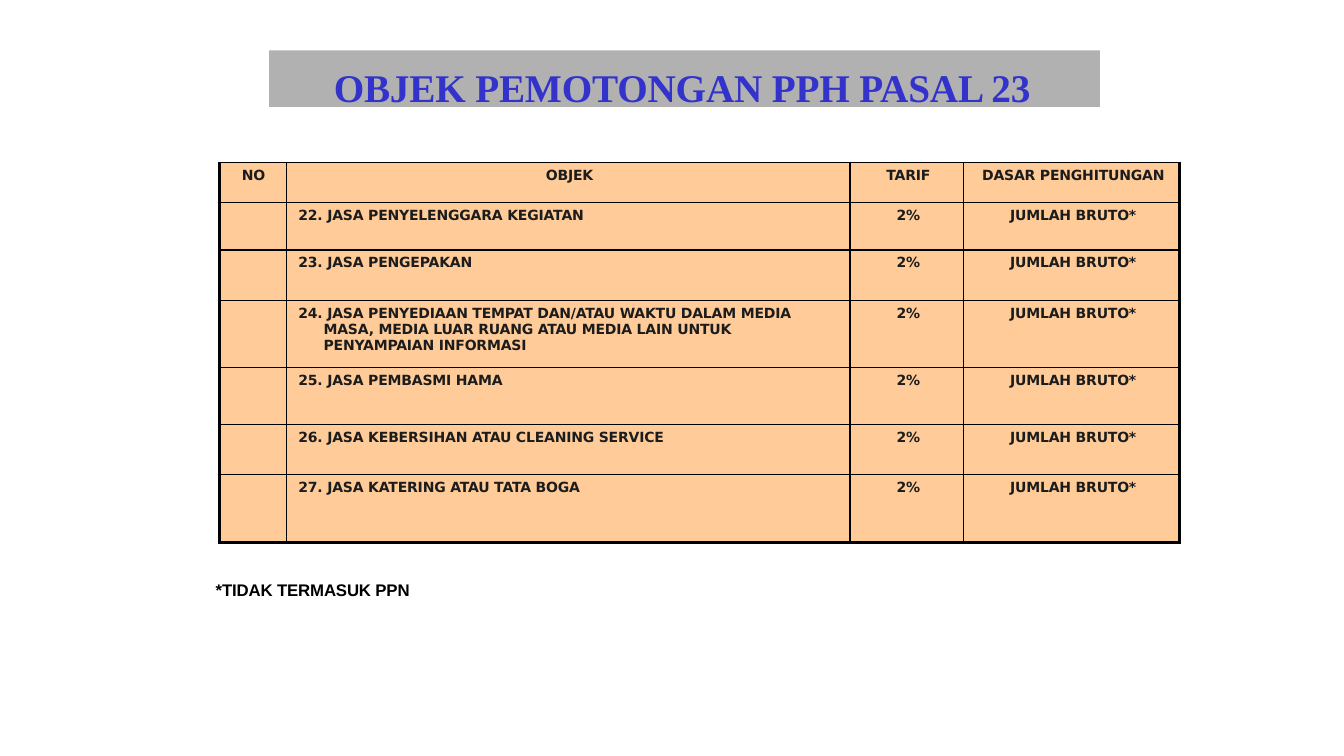
import pptx
import pptx.util
import pptx.dml.color
import pptx.enum.text
import pptx.oxml.ns
import lxml.etree

Inches = pptx.util.Inches
Pt = pptx.util.Pt
RGB = pptx.dml.color.RGBColor
ALIGN = pptx.enum.text.PP_ALIGN
ANCHOR = pptx.enum.text.MSO_ANCHOR
FIT = pptx.enum.text.MSO_AUTO_SIZE

PEACH = RGB(0xFF, 0xCC, 0x99)
GREY = RGB(0xB1, 0xB1, 0xB1)
BLUE = RGB(0x33, 0x33, 0xCC)
INK = RGB(0x1C, 0x1C, 0x1C)
BLACK = RGB(0, 0, 0)

TITLE = "OBJEK PEMOTONGAN PPH PASAL 23"
NOTE = "*TIDAK TERMASUK PPN"
HEAD = ["NO", "OBJEK", "TARIF", "DASAR PENGHITUNGAN"]
ITEMS = [
    "22. JASA PENYELENGGARA KEGIATAN",
    "23. JASA PENGEPAKAN",
    "24. JASA PENYEDIAAN TEMPAT DAN/ATAU WAKTU DALAM MEDIA MASA, "
    "MEDIA LUAR RUANG ATAU MEDIA LAIN UNTUK PENYAMPAIAN INFORMASI",
    "25. JASA PEMBASMI HAMA",
    "26. JASA KEBERSIHAN ATAU CLEANING SERVICE",
    "27. JASA KATERING ATAU TATA BOGA",
]
RATE, BASE = "2%", "JUMLAH BRUTO*"
COLS = [0.66, 5.59, 1.13, 2.14]
ROWS = [0.4, 0.47, 0.5, 0.67, 0.56, 0.5, 0.67]
THIN, THICK = 1, 2.25
HANG = 0.25


def inset(box, left, top, right=0):
    box.margin_left, box.margin_top = Inches(left), Inches(top)
    box.margin_right, box.margin_bottom = Inches(right), 0


def write(frame, text, face, size, color, align=ALIGN.LEFT):
    """Fill a text frame with one bold, slightly tightened paragraph."""
    para = frame.paragraphs[0]
    para.text = text
    para.alignment = align
    para.space_before = Pt(0)
    font = para.font
    font.name, font.size, font.bold = face, Pt(size), True
    font.color.rgb = color
    for run in para.runs:
        run.font.bold = True
        run.font._element.set("spc", "-10")
    return para


def border(cell, widths):
    """Draw the left, right, top and bottom edges, widths in points."""
    props = cell._tc.get_or_add_tcPr()
    for i, (side, width) in enumerate(zip("LRTB", widths)):
        line = lxml.etree.Element(pptx.oxml.ns.qn(f"a:ln{side}"), w=str(Pt(width)))
        fill = lxml.etree.SubElement(line, pptx.oxml.ns.qn("a:solidFill"))
        lxml.etree.SubElement(fill, pptx.oxml.ns.qn("a:srgbClr"), val=str(BLACK))
        props.insert(i, line)


def add_title(slide):
    title = slide.shapes.title
    title.left, title.top = Inches(2.67), Inches(0.5)
    title.width, title.height = Inches(8.24), Inches(0.56)
    title.fill.solid()
    title.fill.fore_color.rgb = GREY
    frame = title.text_frame
    frame.auto_size = FIT.NONE
    frame.vertical_anchor = ANCHOR.TOP
    inset(frame, 0.64, 0.13)
    write(frame, TITLE, "Times New Roman", 28, BLUE)


def add_grid(slide):
    data = [HEAD] + [["", item, RATE, BASE] for item in ITEMS]
    grid = slide.shapes.add_table(
        len(ROWS), len(COLS), Inches(2.18), Inches(1.61),
        Inches(sum(COLS)), Inches(sum(ROWS))).table
    grid.horz_banding = False
    for col, width in zip(grid.columns, COLS):
        col.width = Inches(width)
    for row, height in zip(grid.rows, ROWS):
        row.height = Inches(height)
    for r, texts in enumerate(data):
        for c, text in enumerate(texts):
            cell = grid.cell(r, c)
            item = r > 0 and c == 1
            cell.fill.solid()
            cell.fill.fore_color.rgb = PEACH
            border(cell, (THICK if c == 0 else THIN,
                          THICK if c == len(COLS) - 1 else THIN,
                          THIN,
                          THICK if r == len(ROWS) - 1 else THIN))
            left = 0.22 if c == 0 else 0.12 if item else 0.03
            inset(cell, left, 0.05, 0.3 if item else 0)
            align = ALIGN.LEFT if c == 0 or item else ALIGN.CENTER
            para = write(cell.text_frame, text, "DejaVu Sans", 10, INK, align)
            if item:
                props = para._p.get_or_add_pPr()
                props.set("marL", str(Inches(HANG)))
                props.set("indent", str(-Inches(HANG)))


def add_note(slide):
    box = slide.shapes.add_textbox(
        Inches(2.13), Inches(5.73), Inches(1.98), Inches(0.22))
    frame = box.text_frame
    frame.word_wrap = True
    inset(frame, 0.01, 0.02)
    write(frame, NOTE, "Arial", 12, BLACK)


def main():
    deck = pptx.Presentation()
    deck.slide_width, deck.slide_height = Inches(13.33), Inches(7.5)
    slide = deck.slides.add_slide(deck.slide_layouts[5])
    add_title(slide)
    add_grid(slide)
    add_note(slide)
    deck.save("out.pptx")


if __name__ == "__main__":
    main()
